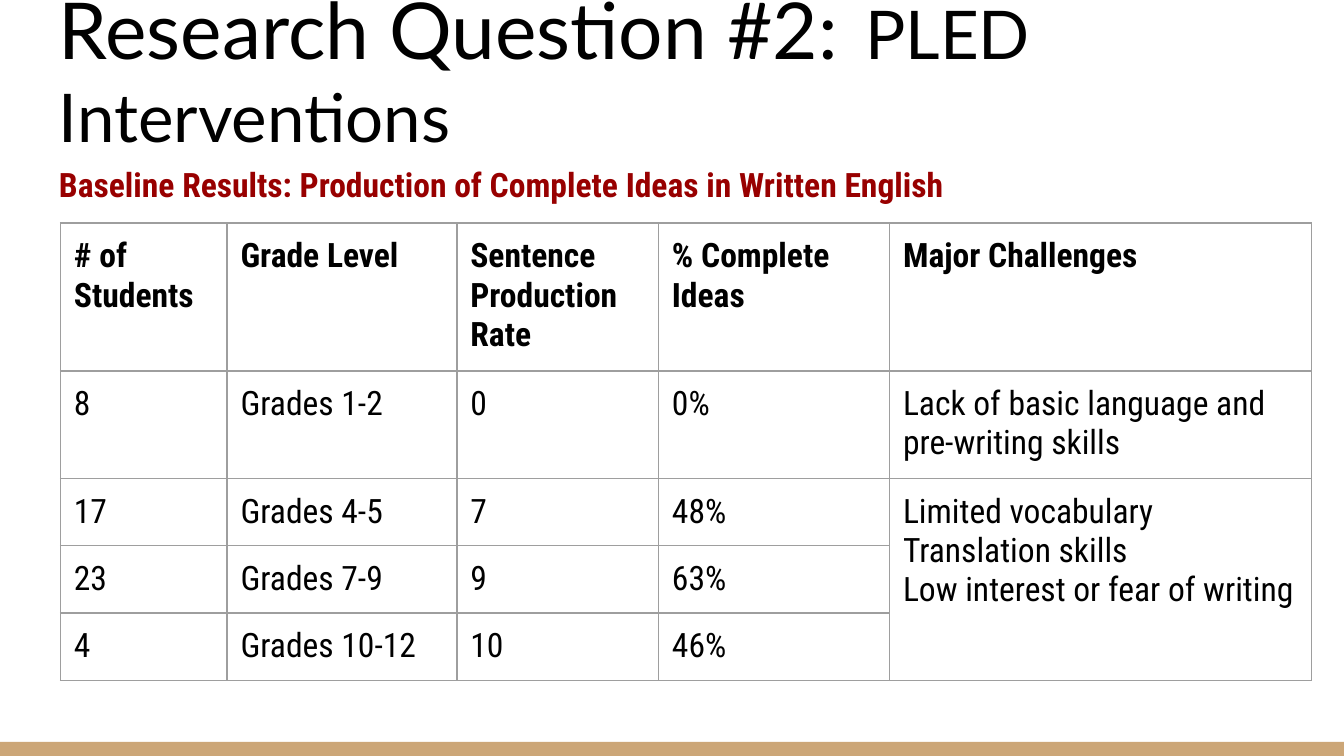
from lxml import etree
from pptx import Presentation
from pptx import util as u
from pptx.dml.color import RGBColor
from pptx.enum import shapes, text
from pptx.oxml import ns

COLORS = {"black": "000000", "heading": "980000", "border": "9E9E9E", "band": "CCA677"}
BODY_FONT = "Roboto Condensed"


def format_runs(paragraph, font, size, color, bold=False):
    for run in paragraph.runs:
        run.font.name = font
        run.font.size = u.Pt(size)
        run.font.bold = bold
        run.font.color.rgb = RGBColor.from_string(COLORS[color])


def add_text_frame(left, top, width, height, anchor):
    """Add a wrapping text box with even insets and return its text frame."""
    box = slide.shapes.add_textbox(*map(u.Inches, (left, top, width, height)))
    frame = box.text_frame
    frame.word_wrap = True
    frame.vertical_anchor = anchor
    frame.margin_left = frame.margin_right = u.Inches(0.1)
    frame.margin_top = frame.margin_bottom = u.Inches(0.1)
    return frame


presentation = Presentation()
presentation.slide_width = u.Inches(10)
presentation.slide_height = u.Inches(10 * 9 / 16)
slide = presentation.slides.add_slide(presentation.slide_layouts[6])

# Band along the bottom edge
band = slide.shapes.add_shape(
    shapes.MSO_SHAPE.RECTANGLE, u.Inches(0), u.Inches(5.52), u.Inches(10), u.Inches(0.11))
band.shadow.inherit = False
band.fill.solid()
band.fill.fore_color.rgb = RGBColor.from_string(COLORS["band"])
band.line.fill.background()

# Title and heading
title = add_text_frame(0.34, 0.35, 9.32, 0.91, text.MSO_ANCHOR.BOTTOM).paragraphs[0]
for wording in ("Research Question #2: \t", "PLED Interventions"):
    title.add_run().text = wording
format_runs(title, "Lato", 42, "black")
title.runs[1].font.size = u.Pt(36)

heading = add_text_frame(0.34, 1.12, 9.55, 4.51, text.MSO_ANCHOR.TOP).paragraphs[0]
heading.text = "Baseline Results: Production of Complete Ideas in Written English"
format_runs(heading, BODY_FONT, 18, "heading", bold=True)

# Results table
rows = [
    ["# of Students", "Grade Level", "Sentence Production Rate", "% Complete Ideas",
     "Major Challenges"],
    ["8", "Grades 1-2", "0", "0%", "Lack of basic language and pre-writing skills"],
    ["17", "Grades 4-5", "7", "48%",
     "Limited vocabulary\nTranslation skills\nLow interest or fear of writing"],
    ["23", "Grades 7-9", "9", "63%", ""],
    ["4", "Grades 10-12", "10", "46%", ""],
]
column_widths = [1.24, 1.71, 1.5, 1.72, 3.14]

table_frame = slide.shapes.add_table(
    len(rows), len(column_widths), u.Inches(0.45), u.Inches(1.66),
    u.Inches(3.28), u.Inches(3.28))
table = table_frame.table
for column, width in zip(table.columns, column_widths):
    column.width = u.Inches(width)
for row in table.rows:
    row.height = u.Inches(0.42)  # rows grow to fit their text
table_frame.width = table_frame.height = u.Inches(3.28)
table.cell(2, 4).merge(table.cell(4, 4))

for row_index, values in enumerate(rows):
    for column_index, value in enumerate(values):
        cell = table.cell(row_index, column_index)
        cell.text_frame.text = value
        cell.margin_left = cell.margin_right = u.Inches(0.1)
        cell.margin_top = cell.margin_bottom = u.Inches(0.1)
        for paragraph in cell.text_frame.paragraphs:
            format_runs(paragraph, BODY_FONT, 18, "black", bold=row_index == 0)
        properties = cell._tc.get_or_add_tcPr()
        for side in ("lnL", "lnR", "lnT", "lnB"):
            border = etree.SubElement(properties, ns.qn(f"a:{side}"), w=str(u.Pt(0.75)))
            fill = etree.SubElement(border, ns.qn("a:solidFill"))
            etree.SubElement(fill, ns.qn("a:srgbClr"), val=COLORS["border"])
        cell.fill.background()

presentation.save("out.pptx")
